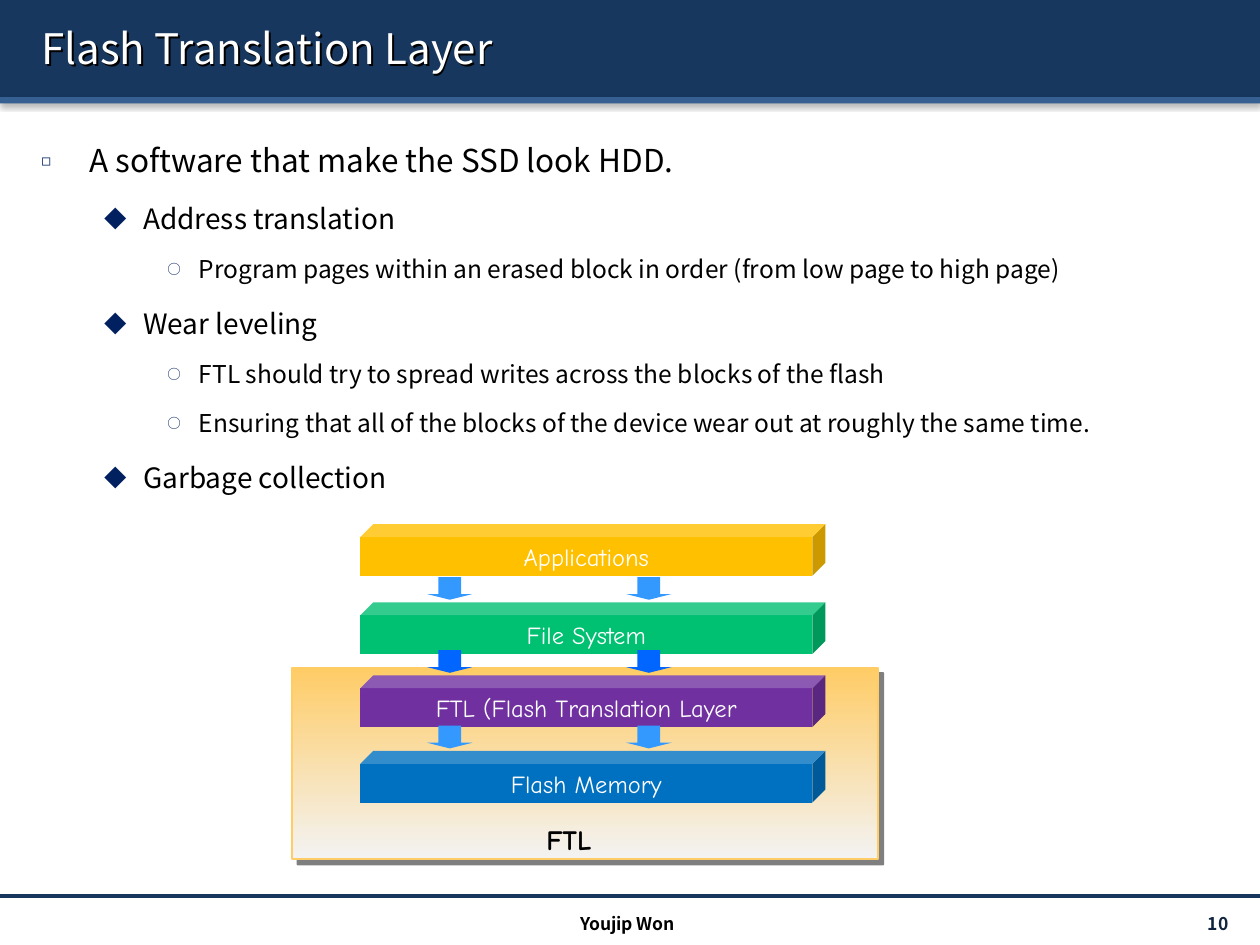
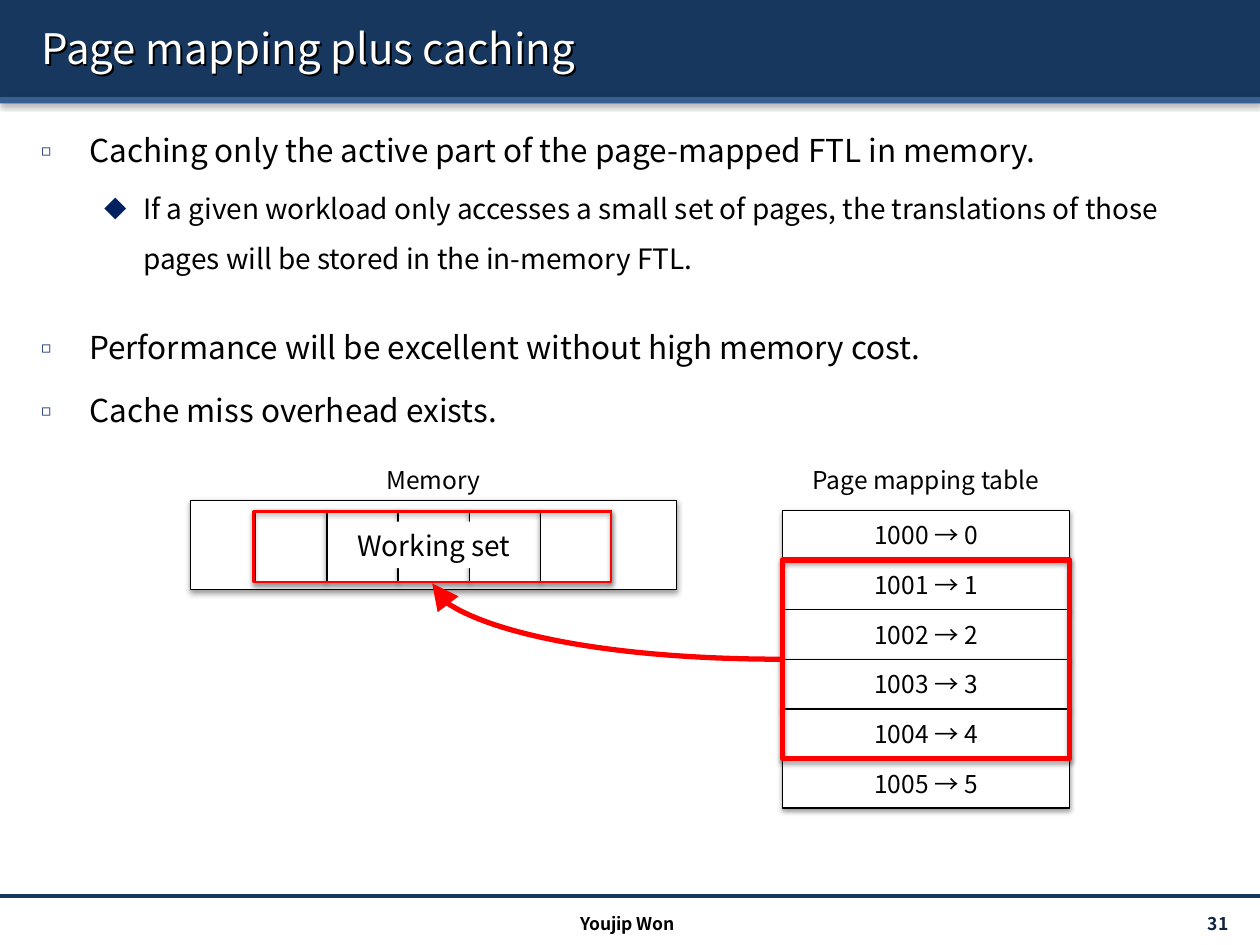
"""Build two slides on flash translation layers: the storage stack and cached page mapping."""
from lxml.etree import SubElement
from pptx import Presentation
from pptx.dml.color import RGBColor
from pptx.enum.shapes import MSO_CONNECTOR, MSO_SHAPE
from pptx.enum.text import MSO_ANCHOR, PP_ALIGN
from pptx.oxml.ns import qn
from pptx.util import Inches, Pt

SANS, COMIC = "Noto Sans CJK KR", "Comic Neue"
NAVY = RGBColor(0x17, 0x37, 0x5E)
STEEL = RGBColor(0x37, 0x60, 0x92)
INK = RGBColor(0x0F, 0x24, 0x3E)
BULLET = RGBColor(0x00, 0x20, 0x60)
BLACK = RGBColor(0, 0, 0)
WHITE = RGBColor(255, 255, 255)
RED = RGBColor(255, 0, 0)
SAND = RGBColor(0xFF, 0xCC, 0x66)
MIST = RGBColor(0xF3, 0xF3, 0xF3)
AMBER = RGBColor(0xFF, 0xC0, 0x00)
GREEN = RGBColor(0x00, 0xC0, 0x72)
PURPLE = RGBColor(0x70, 0x30, 0xA0)
BLUE = RGBColor(0x00, 0x70, 0xC0)
SKY = RGBColor(0x33, 0x99, 0xFF)
COBALT = RGBColor(0x00, 0x66, 0xFF)

WIDTH, HEIGHT = 10, 7.5
AUTHOR = "Youjip Won"
SOFT_SHADOW = dict(alpha=38, blur=3.1, dist=1.6, angle=90)
HARD_SHADOW = dict(alpha=50, blur=0, dist=4.2, angle=45)
TITLE_SHADOW = dict(alpha=100, blur=0, dist=1.5, angle=45)

LEVELS = [
    dict(size=18, left=0.38, hang=0.38, bullet="◻", scale=50),
    dict(size=16, left=0.81, hang=0.31, bullet="◆", scale=80),
    dict(size=14, left=1.25, hang=0.25, bullet="○", scale=55),
]
SECTION_GAP = 19.5

FTL_POINTS = [
    (0, "A software that make the SSD look HDD."),
    (1, "Address translation"),
    (2, "Program pages within an erased block in order (from low page to high page)"),
    (1, "Wear leveling"),
    (2, "FTL should try to spread writes across the blocks of the flash"),
    (2, "Ensuring that all of the blocks of the device wear out at roughly the same time."),
    (1, "Garbage collection"),
]
CACHING_POINTS = [
    (0, "Caching only the active part of the page-mapped FTL in memory."),
    (1, "If a given workload only accesses a small set of pages, the translations "
        "of those pages will be stored in the in-memory FTL."),
    (0, "Performance will be excellent without high memory cost.", SECTION_GAP),
    (0, "Cache miss overhead exists."),
]
STACK = [
    ("Applications", 4.16, AMBER, None),
    ("File System", 4.78, GREEN, SKY),
    ("FTL (Flash Translation Layer", 5.36, PURPLE, COBALT),
    ("Flash Memory", 5.96, BLUE, SKY),
]
MAPPINGS = [f"{1000 + page} → {page}" for page in range(6)]
CACHED_ROWS = range(1, 5)
MEMORY_CELLS = 5


def add_shadow(properties, alpha, blur, dist, angle):
    effects = SubElement(properties, qn("a:effectLst"))
    outer = SubElement(effects, qn("a:outerShdw"), blurRad=str(Pt(blur)), dist=str(Pt(dist)),
                       dir=str(angle * 60000), algn="ctr", rotWithShape="0")
    color = SubElement(outer, qn("a:srgbClr"), val="000000")
    SubElement(color, qn("a:alpha"), val=str(alpha * 1000))


def style(paragraph, size, color=BLACK, font=SANS, bold=False):
    for run in paragraph.runs:
        run.font.size, run.font.bold, run.font.name = Pt(size), bold, font
        run.font.color.rgb = color
        SubElement(run.font._element, qn("a:ea"), typeface=font)


def write(shape, text, size, align=PP_ALIGN.CENTER, wrap=False, **look):
    frame = shape.text_frame
    frame.text = text
    frame.word_wrap = wrap
    frame.vertical_anchor = MSO_ANCHOR.MIDDLE
    frame.paragraphs[0].alignment = align
    style(frame.paragraphs[0], size, **look)


def add_label(slide, text, box, size, **look):
    label = slide.shapes.add_textbox(*map(Inches, box))
    write(label, text, size, **look)
    return label


def add_block(slide, box, fill=None, line=None, weight=0.75, kind=MSO_SHAPE.RECTANGLE, shadow=None):
    block = slide.shapes.add_shape(kind, *map(Inches, box))
    if fill is None:
        block.fill.background()
    else:
        block.fill.solid()
        block.fill.fore_color.rgb = fill
    if line is None:
        block.line.fill.background()
    else:
        block.line.color.rgb = line
        block.line.width = Pt(weight)
    if shadow:
        add_shadow(block.element.spPr, **shadow)
    else:
        block.shadow.inherit = False
    return block


def add_line(slide, kind, start, end, color, weight):
    line = slide.shapes.add_connector(kind, *map(Inches, start + end))
    line.line.color.rgb = color
    line.line.width = Pt(weight)
    SubElement(line.element.spPr, qn("a:effectLst"))
    return line


def add_points(slide, points, top):
    frame = slide.shapes.add_textbox(*map(Inches, (0.23, top, 9.61, 5.92))).text_frame
    frame.word_wrap = True
    for index, (level, text, *gap) in enumerate(points):
        paragraph = frame.paragraphs[0] if index == 0 else frame.add_paragraph()
        rule = LEVELS[level]
        paragraph.text = text
        paragraph.level = level
        paragraph.line_spacing = 1.5
        if index:
            paragraph.space_before = Pt(gap[0] if gap else rule["size"] * 0.2)
        properties = paragraph._p.get_or_add_pPr()
        properties.set("marL", str(Inches(rule["left"])))
        properties.set("indent", str(-Inches(rule["hang"])))
        color = SubElement(properties, qn("a:buClr"))
        SubElement(color, qn("a:srgbClr"), val=str(BULLET))
        SubElement(properties, qn("a:buSzPct"), val=str(rule["scale"] * 1000))
        SubElement(properties, qn("a:buFont"), typeface=SANS)
        SubElement(properties, qn("a:buChar"), char=rule["bullet"])
        style(paragraph, rule["size"])


def add_page(deck, heading, number):
    slide = deck.slides.add_slide(deck.slide_layouts[5])
    add_block(slide, (0, 0, WIDTH, 0.77), NAVY, shadow=SOFT_SHADOW)
    add_block(slide, (0, 0.77, WIDTH, 0.05), STEEL, shadow=SOFT_SHADOW)
    add_line(slide, MSO_CONNECTOR.STRAIGHT, (0, 7.11), (WIDTH, 7.11), NAVY, 2)

    title = slide.shapes.title
    title.left, title.top, title.width, title.height = map(Inches, (0.23, 0.06, 9.61, 0.64))
    write(title, heading, 24, PP_ALIGN.LEFT, True, color=WHITE)
    title.fill.background()
    add_shadow(title.element.spPr, **TITLE_SHADOW)
    slide.shapes._spTree.append(title.element)

    page = add_label(slide, str(number), (8.71, 7.21, 1.17, 0.24), 10,
                     align=PP_ALIGN.RIGHT, wrap=True, color=INK, bold=True)
    page.text_frame.margin_right = Inches(0.13)
    add_label(slide, AUTHOR, (3.32, 7.21, 3.32, 0.24), 10, wrap=True, bold=True)
    return slide


def draw_stack(slide):
    left, width, height = 2.86, 3.69, 0.41
    device = add_block(slide, (2.32, 5.3, 4.65, 1.52), SAND, SAND, 1, shadow=HARD_SHADOW)
    device.fill.gradient()
    device.fill.gradient_angle = 270
    for stop, color, position in zip(device.fill.gradient_stops, (SAND, MIST), (0, 1)):
        stop.color.rgb, stop.position = color, position
    for name, top, color, _ in STACK:
        layer = add_block(slide, (left, top, width, height), color, kind=MSO_SHAPE.CUBE)
        layer.adjustments[0] = 0.25
        write(layer, name, 14, color=WHITE, font=COMIC)
    for _, top, _, arrow_color in STACK[1:]:
        for arrow_left in (3.39, 4.97):
            arrow = add_block(slide, (arrow_left, top - 0.2, 0.36, 0.18), arrow_color,
                              kind=MSO_SHAPE.DOWN_ARROW)
            arrow.adjustments[1] = 0.25
    add_label(slide, "FTL", (3.88, 6.48, 1.27, 0.37), 16, font=COMIC, bold=True)


def draw_mapping(slide):
    memory_left, memory_width = 1.51, 3.86
    table_left, table_top, table_width, row = 6.21, 4.05, 2.28, 0.394
    cell, cells_left = 0.565, 2.03

    def outlined(box, fill=WHITE, line=BLACK, weight=0.75):
        return add_block(slide, box, fill, line, weight, shadow=SOFT_SHADOW)

    outlined((memory_left, 3.97, memory_width, 0.71))
    add_label(slide, "Memory", (memory_left, 3.64, memory_width, 0.34), 14)
    add_label(slide, "Page mapping table", (table_left, 3.64, table_width, 0.34), 14)

    for index, mapping in enumerate(MAPPINGS):
        write(outlined((table_left, table_top + index * row, table_width, row)), mapping, 14)
    cached_top = table_top + CACHED_ROWS[0] * row
    cached_height = len(CACHED_ROWS) * row
    outlined((table_left, cached_top, table_width, cached_height), None, RED, 3)

    for index in range(MEMORY_CELLS):
        outlined((cells_left + index * cell, 4.05, cell, cell))
    write(add_block(slide, (2.73, 4.14, 1.43, 0.37), WHITE), "Working set", 16)
    outlined((2.01, 4.06, 2.84, 0.56), None, RED, 1.5)

    load = add_line(slide, MSO_CONNECTOR.CURVE, (3.43, 4.63),
                    (table_left, cached_top + cached_height / 2), RED, 3)
    properties = load.element.spPr
    properties.find(qn("a:xfrm")).set("rot", str(180 * 60000))
    properties.find(qn("a:prstGeom")).set("prst", "curvedConnector2")
    SubElement(properties.find(qn("a:ln")), qn("a:tailEnd"), type="triangle", w="lg", len="lg")


def main():
    deck = Presentation()
    deck.slide_width, deck.slide_height = Inches(WIDTH), Inches(HEIGHT)

    translation = add_page(deck, "Flash Translation Layer", 10)
    add_points(translation, FTL_POINTS, 0.92)
    draw_stack(translation)

    caching = add_page(deck, "Page mapping plus caching", 31)
    add_points(caching, CACHING_POINTS, 0.84)
    draw_mapping(caching)

    deck.save("out.pptx")


if __name__ == "__main__":
    main()
